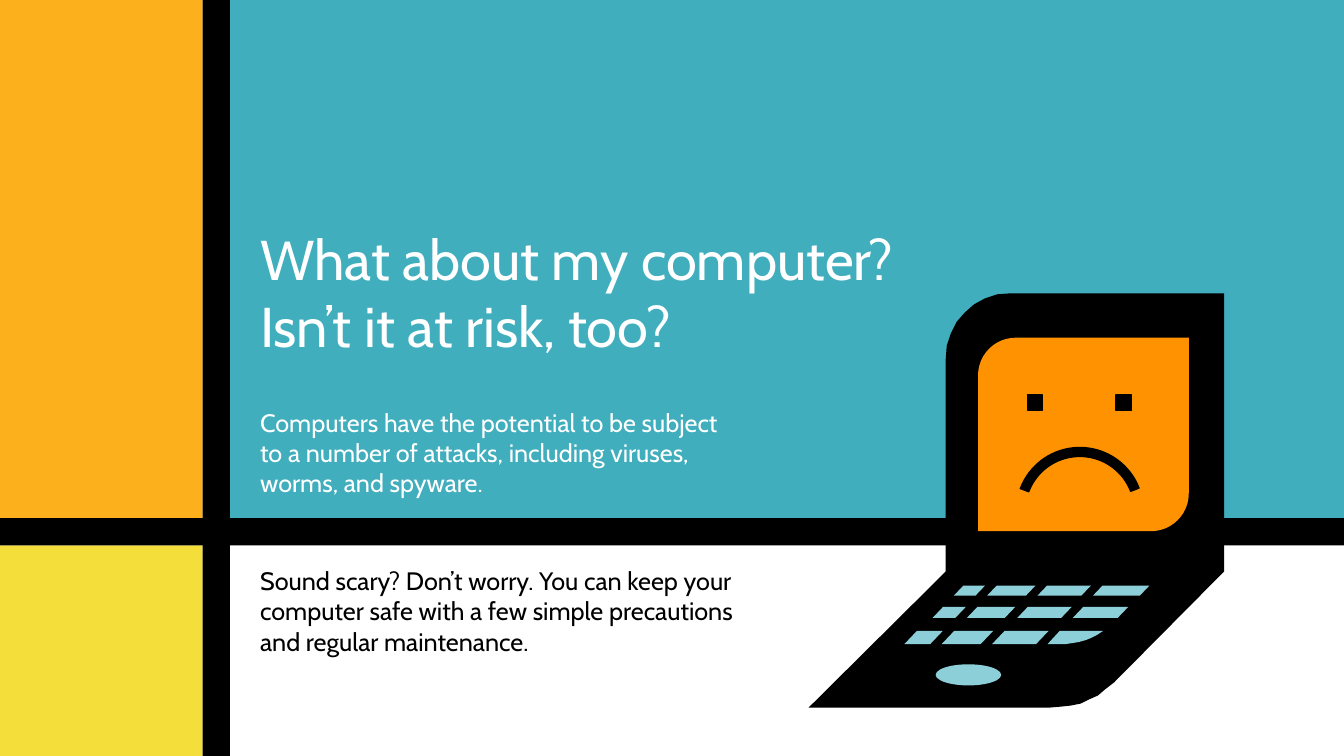
from lxml.etree import SubElement
from pptx import Presentation
from pptx.dml.color import RGBColor
from pptx.enum.shapes import MSO_SHAPE
from pptx.enum.text import MSO_ANCHOR, MSO_AUTO_SIZE, PP_ALIGN
from pptx.oxml.ns import qn
from pptx.util import Inches, Pt

TEAL = RGBColor(0x41, 0xAE, 0xBD)
AMBER = RGBColor(0xFC, 0xB1, 0x1C)
YELLOW = RGBColor(0xF4, 0xDE, 0x3A)
ORANGE = RGBColor(0xFF, 0x92, 0x01)
KEY_BLUE = RGBColor(0x8D, 0xCF, 0xD8)
BLACK = RGBColor(0, 0, 0)
WHITE = RGBColor(255, 255, 255)

# Grid unit: a hundredth of an inch
U = Inches(0.01)
W, H = 1333, 750
BAR = 27
BAR_X, BAR_Y = 201, 514
MAIN_X, LOWER_Y = BAR_X + BAR, BAR_Y + BAR
BODY_W, BODY_H = 531, 131

prs = Presentation()
prs.slide_width, prs.slide_height = W * U, H * U
s = prs.slides.add_slide(prs.slide_layouts[3])
title, risk, advice = s.placeholders


def paint(sp, color, outlined=False):
    sp.shadow.inherit = False
    sp.fill.solid()
    sp.fill.fore_color.rgb = color
    if outlined:
        sp.line.color.rgb = color
        sp.line.width = Pt(1)
    else:
        sp.line.fill.background()
    return sp


def write(sp, text, box, size=18, color=WHITE, anchor=MSO_ANCHOR.TOP, pad=20):
    """Place a placeholder in front of the panels and fill it with plain text."""
    s.shapes.element.append(sp.element)
    sp.left, sp.top, sp.width, sp.height = [v * U for v in box]
    tf = sp.text_frame
    tf.text = text
    tf.word_wrap = True
    tf.auto_size = MSO_AUTO_SIZE.NONE
    tf.vertical_anchor = anchor
    tf.margin_left = tf.margin_right = 30 * U
    tf.margin_top = tf.margin_bottom = pad * U
    for p in tf.paragraphs:
        p.alignment = PP_ALIGN.LEFT
        p.space_before = Pt(0)
        pPr = p._p.get_or_add_pPr()
        pPr.set("marL", "0")
        pPr.set("indent", "0")
        SubElement(pPr, qn("a:buNone"))
        for r in p.runs:
            r.font.name = "Cabin"
            r.font.size = Pt(size)
            r.font.color.rgb = color


# Panels and crossing bars
for x, y, w, h, color in [
    (MAIN_X, 0, W - MAIN_X, BAR_Y, TEAL),
    (0, 0, BAR_X, BAR_Y, AMBER),
    (0, LOWER_Y, BAR_X, H - LOWER_Y, YELLOW),
    (0, BAR_Y, W, BAR, BLACK),
    (BAR_X, 0, BAR, H, BLACK),
]:
    paint(s.shapes.add_shape(MSO_SHAPE.RECTANGLE, x * U, y * U, w * U, h * U), color)

# Title and text
write(title, "What about my computer?\nIsn’t it at risk, too?",
      (MAIN_X, 208, W - MAIN_X, 165), size=40, pad=15)
write(risk, "Computers have the potential to be subject to a number of attacks, "
      "including viruses, worms, and spyware.",
      (MAIN_X, BAR_Y - BODY_H, BODY_W, BODY_H), anchor=MSO_ANCHOR.BOTTOM)
write(advice, "Sound scary? Don’t worry. You can keep your computer safe with a few "
      "simple precautions and regular maintenance.",
      (MAIN_X, LOWER_Y, BODY_W, BODY_H), color=BLACK)

# Laptop case and the curved last key
laptop = [
    (1214, 291), (1002, 291), (989, 292), (977, 296), (966, 302), (957, 310),
    (949, 319), (943, 331), (939, 343), (938, 356), (938, 567), (802, 702),
    (1029, 702), (1041, 702), (1053, 701), (1062, 700), (1072, 698), (1080, 694),
    (1089, 690), (1096, 684), (1105, 677), (1214, 567),
]
last_key = [
    (1051, 626), (1039, 639), (1048, 639), (1057, 639), (1064, 638), (1070, 637),
    (1077, 635), (1082, 633), (1088, 630), (1094, 626),
]
for points, color in [(laptop, BLACK), (last_key, KEY_BLUE)]:
    builder = s.shapes.build_freeform(*points[0], scale=U)
    builder.add_line_segments(points[1:], close=True)
    paint(builder.convert_to_shape(), color)

# Keys: row top and height, then left and width of each key
for top, height, keys in [
    (581, 10, [(946, 31), (979, 48), (1029, 53), (1084, 56)]),
    (602, 11, [(925, 33), (959, 48), (1009, 54), (1064, 55)]),
    (626, 13, [(897, 38), (934, 51), (984, 56)]),
]:
    for left, width in keys:
        key = s.shapes.add_shape(MSO_SHAPE.PARALLELOGRAM,
                                 left * U, top * U, width * U, height * U)
        key.adjustments[0] = 0.95
        paint(key, KEY_BLUE)

touchpad = s.shapes.add_shape(MSO_SHAPE.OVAL, 928 * U, 659 * U, 65 * U, 21 * U)
paint(touchpad, KEY_BLUE)

# Screen with a sad face
screen = s.shapes.add_shape(MSO_SHAPE.ROUND_2_DIAG_RECTANGLE,
                            970 * U, 335 * U, 209 * U, 192 * U)
screen.adjustments[0] = 0.195
paint(screen, ORANGE)
for eye_x in (1019, 1107):
    eye = s.shapes.add_shape(MSO_SHAPE.RECTANGLE, eye_x * U, 392 * U, 15 * U, 15 * U)
    paint(eye, BLACK, outlined=True)
mouth = s.shapes.add_shape(MSO_SHAPE.BLOCK_ARC, 1008 * U, 444 * U, 126 * U, 126 * U)
for i, value in enumerate((120.41, 203.3, 0.07)):
    mouth.adjustments[i] = value
paint(mouth, BLACK, outlined=True)

prs.save("out.pptx")
